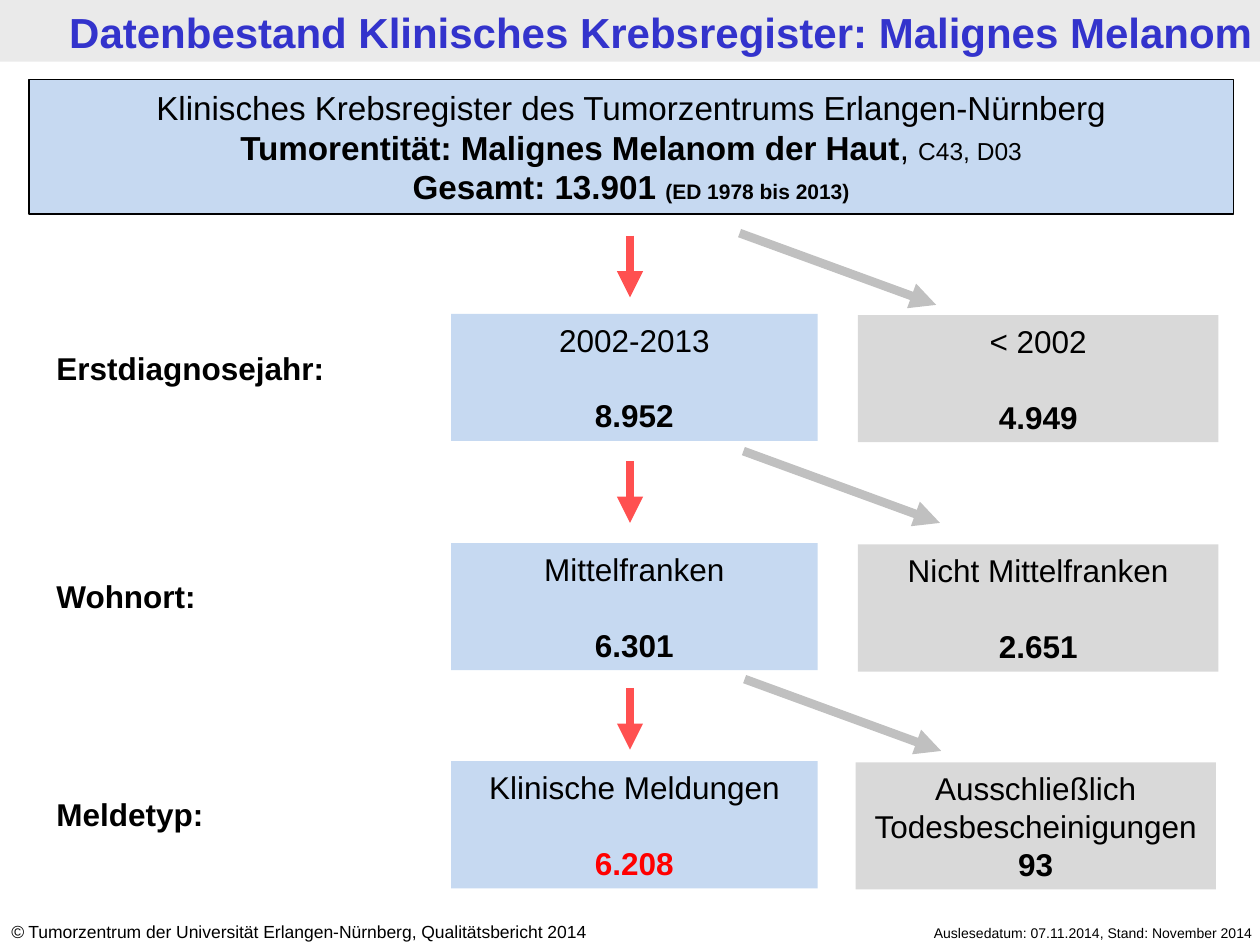
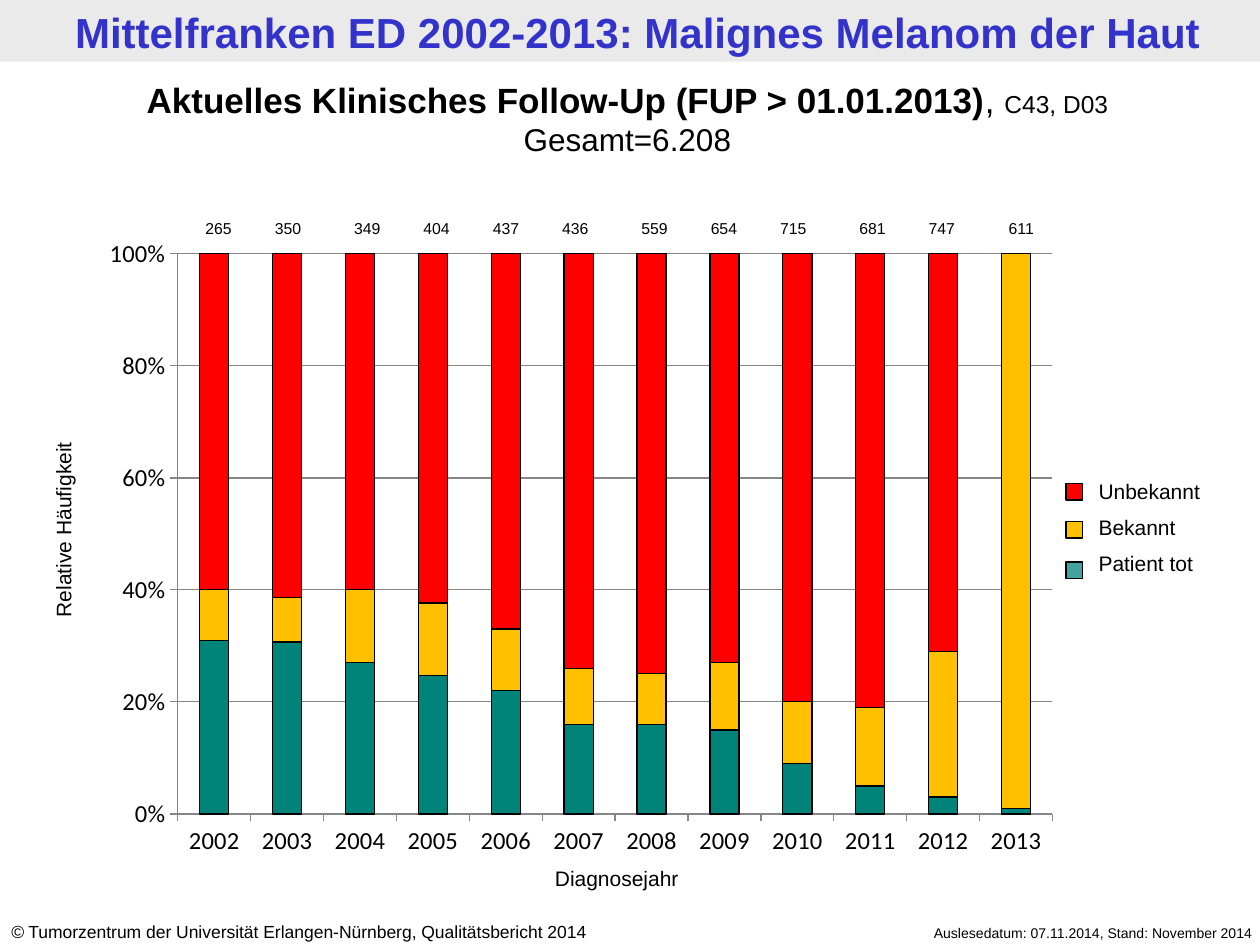
from lxml import etree
from pptx import Presentation
from pptx.chart.data import CategoryChartData
from pptx.dml.color import RGBColor
from pptx.enum.chart import XL_CHART_TYPE, XL_TICK_MARK
from pptx.enum.shapes import MSO_CONNECTOR, MSO_SHAPE
from pptx.enum.text import MSO_ANCHOR, MSO_AUTO_SIZE, PP_ALIGN
from pptx.oxml import parse_xml
from pptx.oxml.ns import nsdecls, qn
from pptx.util import Inches, Pt

COLORS = {
    "black": "000000", "band": "EAEAEA", "title": "3333CC",
    "kept": "C6D9F1", "excluded": "D9D9D9", "result": "FF0000",
    "kept_arrow": "FF5050", "excluded_arrow": "C0C0C0", "grid": "868686",
    "dead": "008378", "dead_key": "008380", "known": "FFC000", "unknown": "FF0000",
}
FONT = "Arial"
LEFT, CENTER, RIGHT = PP_ALIGN.LEFT, PP_ALIGN.CENTER, PP_ALIGN.RIGHT

# A paragraph is a list of runs: (text, size, style letters, colour)
COPYRIGHT = [[("©", 10, "i"),
              (" Tumorzentrum der Universität Erlangen-Nürnberg, Qualitätsbericht 2014", 10)]]
STATUS = [[("Auslesedatum: 07.11.2014, Stand: November 2014", 8)]]

STOCK_TITLE = "Datenbestand Klinisches Krebsregister: Malignes Melanom"
REGISTER = [
    [("Klinisches Krebsregister des Tumorzentrums Erlangen-Nürnberg", 19)],
    [("Tumorentität: Malignes Melanom der Haut", 19, "b"), (", ", 19), ("C43, D03", 14)],
    [("Gesamt: 13.901 ", 19, "b"), ("(ED 1978 bis 2013)", 12, "b")],
]
# label, label top, box top, kept (name, count), excluded (name, count), excluded left
STEPS = [
    ("Erstdiagnosejahr:", 2.72, 2.49, ("2002-2013", "8.952"), ("< 2002", "4.949"), 6.81),
    ("Wohnort:", 4.53, 4.31, ("Mittelfranken", "6.301"),
     ("Nicht Mittelfranken", "2.651"), 6.81),
    ("Meldetyp:", 6.26, 6.04, ("Klinische Meldungen", "6.208"),
     ("Ausschließlich Todesbescheinigungen", "93"), 6.79),
]
KEPT_ARROW_TOPS = [1.87, 3.66, 5.46]
EXCLUDED_ARROW_STARTS = [(5.87, 1.85), (5.9, 3.58), (5.91, 5.39)]

FOLLOW_UP_TITLE = "Mittelfranken ED 2002-2013: Malignes Melanom der Haut"
FOLLOW_UP = [
    [("Aktuelles Klinisches Follow-Up (FUP > 01.01.2013)", 20, "b"),
     (", ", 20), ("C43, D03", 14)],
    [("Gesamt=6.208", 18)],
]
# year, cases, left of the case label, dead %, known %, unknown %
YEARS = [
    ("2002", 265, 1.46, 31, 9, 60), ("2003", 350, 2.01, 31, 8, 62),
    ("2004", 349, 2.64, 27, 13, 60), ("2005", 404, 3.19, 25, 13, 63),
    ("2006", 437, 3.74, 22, 11, 67), ("2007", 436, 4.29, 16, 10, 74),
    ("2008", 559, 4.92, 16, 9, 75), ("2009", 654, 5.47, 15, 12, 73),
    ("2010", 715, 6.02, 9, 11, 80), ("2011", 681, 6.65, 5, 14, 81),
    ("2012", 747, 7.2, 3, 26, 71), ("2013", 611, 7.83, 1, 99, 0),
]
SERIES_COLORS = ["dead", "known", "unknown"]
# text, key colour, key top
LEGEND = [("Unbekannt", "unknown", 3.84), ("Bekannt", "known", 4.14),
          ("Patient tot", "dead_key", 4.46)]


def rgb(name):
    return RGBColor.from_string(COLORS[name])


def write(frame, paragraphs, align=LEFT, gap=0):
    """Fill a text frame; gap is the space before every paragraph but the first."""
    frame.word_wrap = True
    for index, runs in enumerate(paragraphs):
        paragraph = frame.paragraphs[0] if index == 0 else frame.add_paragraph()
        paragraph.alignment = align
        if index and gap:
            paragraph.space_before = Pt(gap)
        for text, size, *look in runs:
            style = look[0] if look else ""
            run = paragraph.add_run()
            run.text = text
            run.font.name = FONT
            run.font.size = Pt(size)
            run.font.bold = "b" in style
            run.font.italic = "i" in style
            run.font.color.rgb = rgb(look[1] if len(look) > 1 else "black")


def add_text(slide, box, paragraphs, align=LEFT, gap=0):
    text = slide.shapes.add_textbox(*map(Inches, box))
    write(text.text_frame, paragraphs, align, gap)
    return text


def add_box(slide, box, fill, outlined=False):
    shape = slide.shapes.add_shape(MSO_SHAPE.RECTANGLE, *map(Inches, box))
    shape.shadow.inherit = False
    shape.fill.solid()
    shape.fill.fore_color.rgb = rgb(fill)
    if outlined:
        shape.line.color.rgb = rgb("black")
        shape.line.width = Pt(0.75)
    else:
        shape.line.fill.background()
    return shape


def add_arrow(slide, start, end, color):
    arrow = slide.shapes.add_connector(
        MSO_CONNECTOR.STRAIGHT, *map(Inches, (*start, *end)))
    arrow.line.color.rgb = rgb(color)
    arrow.line.width = Pt(5)
    etree.SubElement(arrow.line._get_or_add_ln(), qn("a:tailEnd"), type="triangle")
    etree.SubElement(arrow._element.spPr, qn("a:effectLst"))


def add_slide(deck, title, title_inset=(0.09, 0.09)):
    """Add a slide with the shared band, title and footers."""
    slide = deck.slides.add_slide(deck.slide_layouts[5])
    band = add_box(slide, (0, 0, 10, 0.49), "band")
    slide.shapes._spTree.insert(2, band._element)

    heading = slide.shapes.title
    heading.left, heading.top, heading.width, heading.height = map(
        Inches, (0.06, 0.01, 10, 0.49))
    frame = heading.text_frame
    frame.auto_size = MSO_AUTO_SIZE.NONE
    frame.vertical_anchor = MSO_ANCHOR.TOP
    frame.margin_left, frame.margin_right = map(Inches, title_inset)
    frame.margin_top = frame.margin_bottom = Inches(0.04)
    write(frame, [[(title, 24, "b", "title")]], CENTER)

    add_text(slide, (6.65, 7.29, 3.39, 0.24), STATUS, RIGHT)
    add_text(slide, (-0.01, 7.26, 5.24, 0.27), COPYRIGHT)
    return slide


def add_group_box(slide, box, fill, group, count_color="black"):
    name, count = group
    shape = add_box(slide, box, fill)
    gap = 0 if len(name) > 20 else 21.6  # a two-line name leaves no free line
    write(shape.text_frame, [[(name, 18)], [(count, 18, "b", count_color)]], CENTER, gap)


def build_stock(deck):
    slide = add_slide(deck, STOCK_TITLE, (0.42, 0.05))
    register = add_box(slide, (0.23, 0.63, 9.56, 1.07), "kept", outlined=True)
    write(register.text_frame, REGISTER, CENTER)

    for label, label_top, top, kept, excluded, excluded_left in STEPS:
        add_text(slide, (0.35, label_top, 2.76, 0.4), [[(label, 18, "b")]])
        is_last = label == STEPS[-1][0]
        add_group_box(slide, (3.58, top, 2.91, 1.01), "kept", kept,
                      "result" if is_last else "black")
        add_group_box(slide, (excluded_left, top + 0.01, 2.86, 1.01), "excluded", excluded)

    for top in KEPT_ARROW_TOPS:
        add_arrow(slide, (5, top), (5, top + 0.49), "kept_arrow")
    for x, y in EXCLUDED_ARROW_STARTS:
        add_arrow(slide, (x, y), (x + 1.56, y + 0.57), "excluded_arrow")


def style_axis(axis):
    axis.major_tick_mark = XL_TICK_MARK.OUTSIDE
    axis.minor_tick_mark = XL_TICK_MARK.NONE
    axis.tick_labels.font.size = Pt(14)
    axis.format.line.color.rgb = rgb("grid")


def set_plot_area(chart, x, y, w, h):
    """Fix the inner plot area, in shares of the chart."""
    plot_area = chart._chartSpace.chart.plotArea
    for old in plot_area.findall(qn("c:layout")):
        plot_area.remove(old)
    sizes = "".join(f'<c:{key} val="{value}"/>'
                    for key, value in zip("xywh", (x, y, w, h)))
    plot_area.insert(0, parse_xml(
        f'<c:layout {nsdecls("c")}><c:manualLayout><c:layoutTarget val="inner"/>'
        f'<c:xMode val="edge"/><c:yMode val="edge"/>{sizes}'
        '</c:manualLayout></c:layout>'))


def add_follow_up_chart(slide):
    years, _, _, *shares = zip(*YEARS)
    data = CategoryChartData()
    data.categories = years
    for number, values in enumerate(shares, 1):
        data.add_series(f"Series {number}", values)
    chart = slide.shapes.add_chart(
        XL_CHART_TYPE.COLUMN_STACKED_100,
        *map(Inches, (0.71, 1.79, 7.8, 5.11)), data).chart
    chart.has_legend = False
    chart.has_title = False
    chart.font.name = "Calibri"
    chart.font.size = Pt(18)
    chart.font.color.rgb = rgb("black")

    plot = chart.plots[0]
    plot.gap_width = 150
    plot.overlap = 100
    plot.vary_by_categories = False
    for series, color in zip(plot.series, SERIES_COLORS):
        series.format.fill.solid()
        series.format.fill.fore_color.rgb = rgb(color)
        series.format.line.color.rgb = rgb("black")
        series.format.line.width = Pt(0.75)

    style_axis(chart.category_axis)
    shares_axis = chart.value_axis
    style_axis(shares_axis)
    shares_axis.major_unit = 0.2
    shares_axis.tick_labels.number_format = "0%"
    shares_axis.tick_labels.number_format_is_linked = False
    shares_axis.has_major_gridlines = True
    shares_axis.major_gridlines.format.line.color.rgb = rgb("grid")
    set_plot_area(chart, 0.09, 0.044, 0.89, 0.87)


def build_follow_up(deck):
    slide = add_slide(deck, FOLLOW_UP_TITLE)
    add_follow_up_chart(slide)
    share_label = add_text(slide, (-0.7, 4.05, 2.41, 0.31),
                           [[("Relative Häufigkeit", 12)]], CENTER)
    share_label.rotation = 270
    add_text(slide, (3.77, 6.82, 2.25, 0.31), [[("Diagnosejahr", 12)]], CENTER)
    add_text(slide, (-0.04, 0.57, 10.04, 0.74), FOLLOW_UP, CENTER)

    for _, cases, left, *_ in YEARS:
        add_text(slide, (left, 1.69, 0.55, 0.25), [[(str(cases), 9)]], CENTER)

    add_text(slide, (8.62, 3.75, 1.42, 0.91),
             [[(text, 12)] for text, _, _ in LEGEND], gap=6)
    for _, color, top in LEGEND:
        key = add_box(slide, (8.46, top, 0.13, 0.13), color, outlined=True)
        if color == "dead_key":
            fill = key._element.spPr.find(qn("a:solidFill"))
            etree.SubElement(fill[0], qn("a:alpha"), val="74000")


def main():
    deck = Presentation()
    deck.slide_width, deck.slide_height = Inches(10), Inches(7.5)
    build_stock(deck)
    build_follow_up(deck)
    deck.save("out.pptx")


if __name__ == "__main__":
    main()
